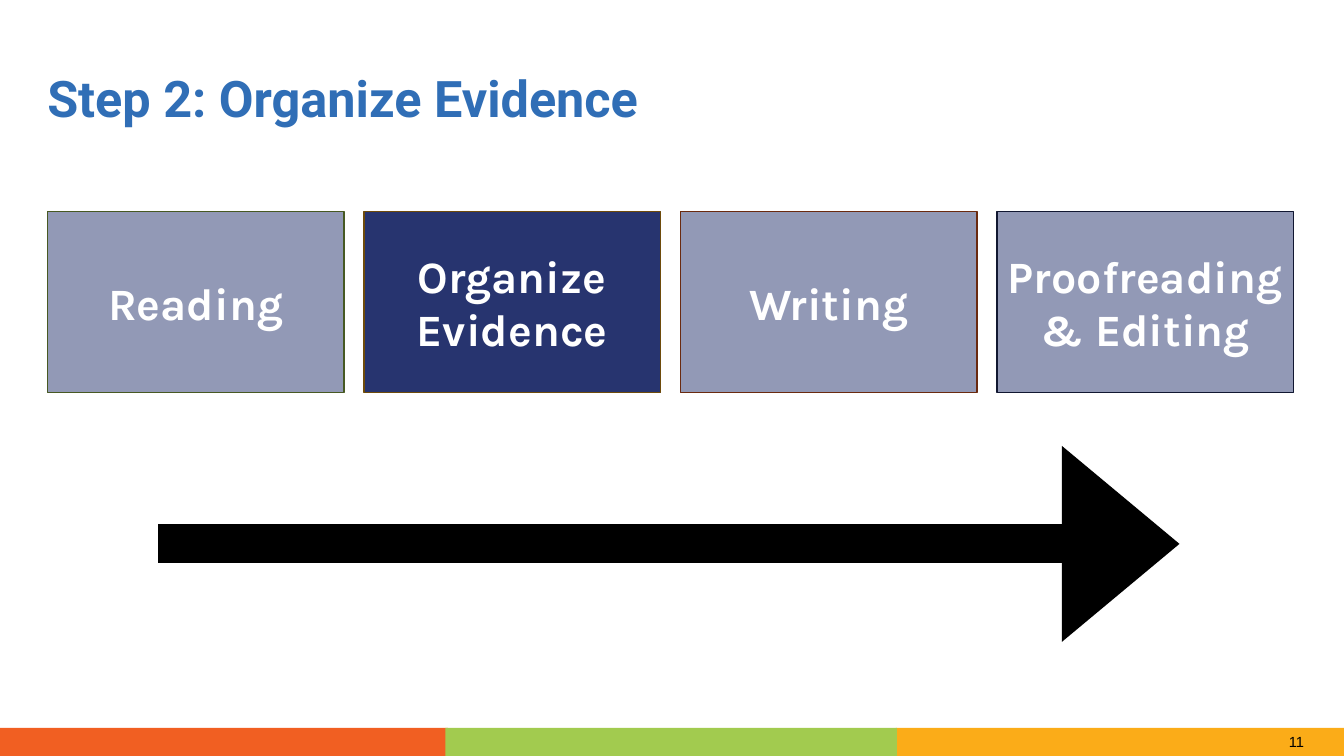
"""Build the "Organize Evidence" step slide with its four-stage process."""
from lxml import etree
from pptx import Presentation
from pptx.dml.color import RGBColor
from pptx.enum import shapes, text
from pptx.oxml import ns
from pptx.util import Pt

TITLE = "Step 2: Organize Evidence"
PAGE_NUMBER = "11"
WHITE = RGBColor(0xFF, 0xFF, 0xFF)
BLACK = RGBColor(0, 0, 0)
BLUE = RGBColor(0x30, 0x6E, 0xB6)
NAVY = RGBColor(0x27, 0x34, 0x6F)
STAGES = [
    ("Reading", RGBColor(0x47, 0x59, 0x23)),
    ("Organize Evidence", RGBColor(0x6E, 0x4B, 0x0B)),
    ("Writing", RGBColor(0x6A, 0x2A, 0x0F)),
    ("Proofreading & Editing", RGBColor(0x11, 0x17, 0x31)),
]
CURRENT_STAGE = "Organize Evidence"
FOOTER_BANDS = [
    (640, 320, RGBColor(0xFB, 0xAC, 0x18)),
    (0, 320, RGBColor(0xF1, 0x5F, 0x22)),
    (318.2, 322.5, RGBColor(0xA2, 0xCB, 0x4F)),
]
SLIDE_WIDTH, SLIDE_HEIGHT = 960, 540
MARGIN = 33.8
STAGE_TOP, STAGE_WIDTH, STAGE_HEIGHT, STAGE_STEP = 151, 212, 129.6, 226.1
FOOTER_TOP = 520
ARROW_START, ARROW_END, ARROW_Y = 113, 842.5, 388.5


def add_rectangle(page, left, top, width, height, fill):
    box = page.shapes.add_shape(shapes.MSO_SHAPE.RECTANGLE,
                                Pt(left), Pt(top), Pt(width), Pt(height))
    box.shadow.inherit = False
    box.fill.solid()
    box.fill.fore_color.rgb = fill
    box.line.fill.background()
    return box


def write(frame, words, font_name, size, color, bold=False):
    para = frame.paragraphs[0]
    para.text = words
    para.font.name = font_name
    para.font.size = Pt(size)
    para.font.bold = bold
    para.font.color.rgb = color
    return para


def add_text(page, left, top, width, height):
    frame = page.shapes.add_textbox(Pt(left), Pt(top), Pt(width), Pt(height)).text_frame
    frame.word_wrap = True
    return frame


def add_stage(page, index, label, outline):
    box = add_rectangle(page, MARGIN + index * STAGE_STEP, STAGE_TOP,
                        STAGE_WIDTH, STAGE_HEIGHT, NAVY)
    if label != CURRENT_STAGE:
        color = box.fill._xPr.find(".//" + ns.qn("a:srgbClr"))
        etree.SubElement(color, ns.qn("a:alpha"), val="50000")
    box.line.color.rgb = outline
    box.line.width = Pt(1)
    box.text_frame.word_wrap = True
    box.text_frame.vertical_anchor = text.MSO_ANCHOR.MIDDLE
    para = write(box.text_frame, label, "Karla", 32, WHITE, bold=True)
    para.alignment = text.PP_ALIGN.CENTER


def add_arrow(page):
    arrow = page.shapes.add_connector(shapes.MSO_CONNECTOR.STRAIGHT, Pt(ARROW_START),
                                      Pt(ARROW_Y), Pt(ARROW_END), Pt(ARROW_Y))
    arrow.line.color.rgb = BLACK
    arrow.line.width = Pt(28)
    etree.SubElement(arrow.line._get_or_add_ln(), ns.qn("a:tailEnd"),
                     type="triangle", w="lg", len="med")
    etree.SubElement(arrow._element.spPr, ns.qn("a:effectLst"))


def main():
    deck = Presentation()
    deck.slide_width, deck.slide_height = Pt(SLIDE_WIDTH), Pt(SLIDE_HEIGHT)
    page = deck.slides.add_slide(deck.slide_layouts[6])

    for left, width, color in FOOTER_BANDS:
        add_rectangle(page, left, FOOTER_TOP, width, SLIDE_HEIGHT - FOOTER_TOP, color)
    number = add_text(page, 913.5, FOOTER_TOP, 27.5, 20)
    write(number, PAGE_NUMBER, "Arial", 10.5, BLACK)

    title = add_text(page, MARGIN, 55.4, 893, 34)
    title.margin_left = title.margin_right = title.margin_top = title.margin_bottom = 0
    title.vertical_anchor = text.MSO_ANCHOR.MIDDLE
    write(title, TITLE, "Roboto", 36, BLUE, bold=True).line_spacing = 0.9

    for index, (label, outline) in enumerate(STAGES):
        add_stage(page, index, label, outline)
    add_arrow(page)
    deck.save("out.pptx")


if __name__ == "__main__":
    main()
